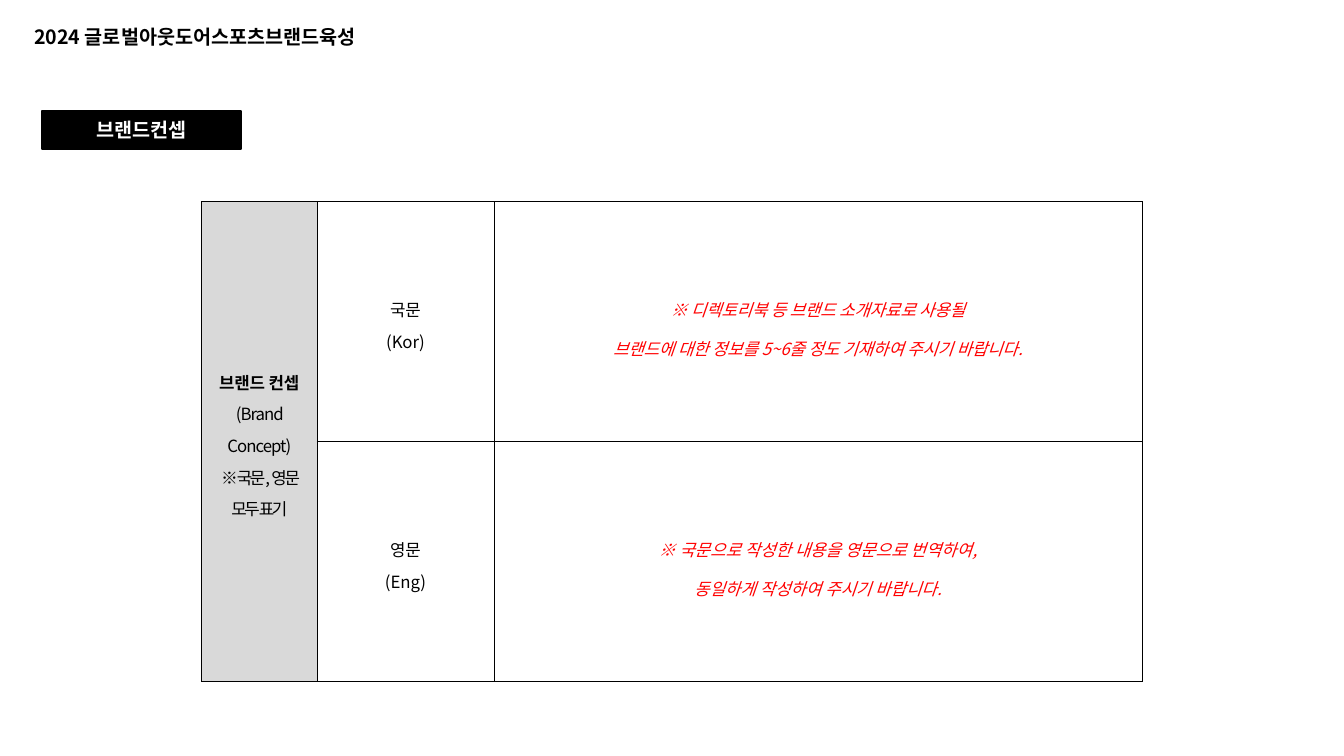
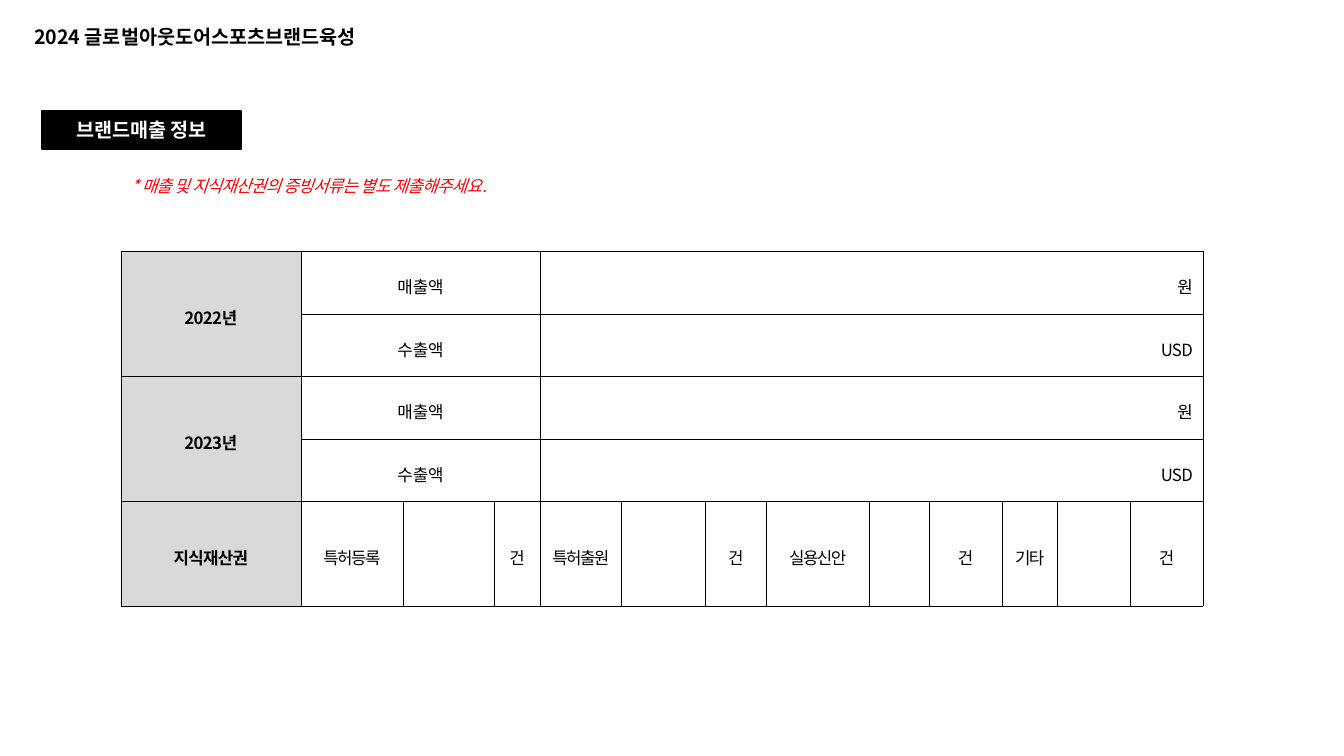
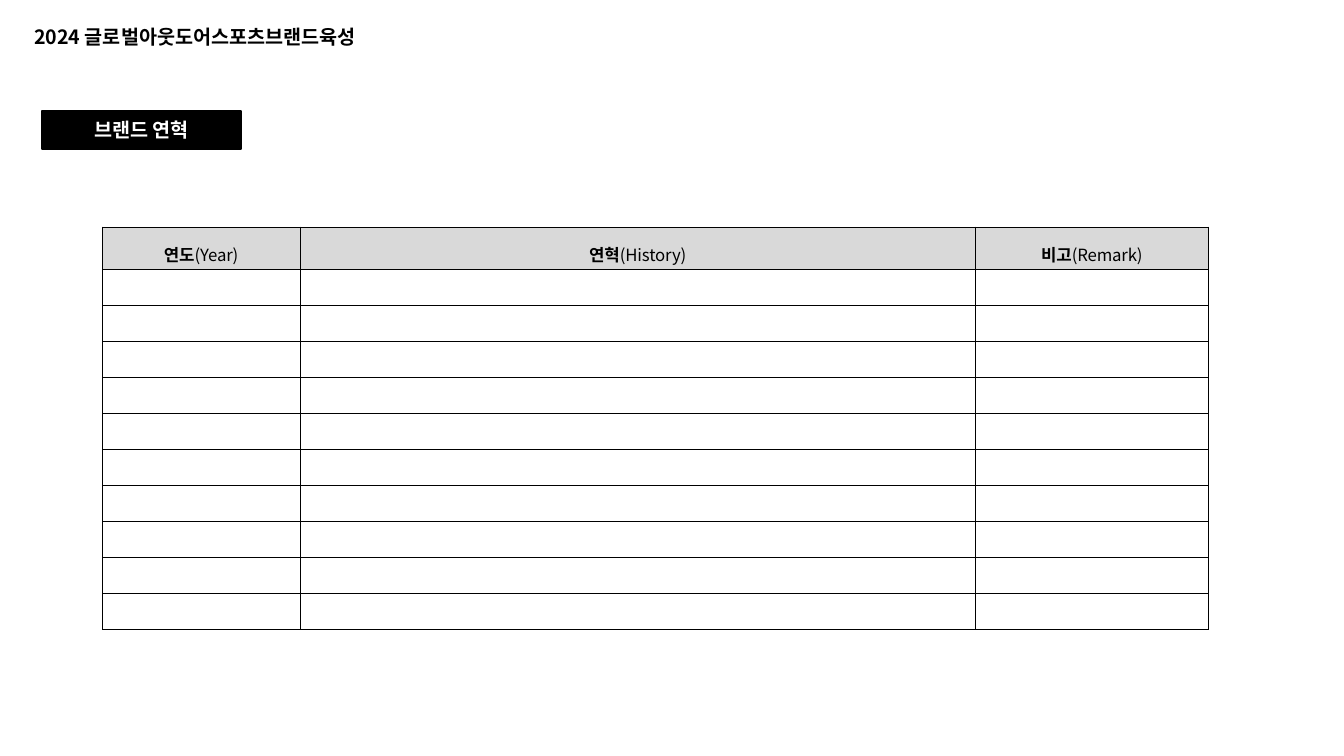
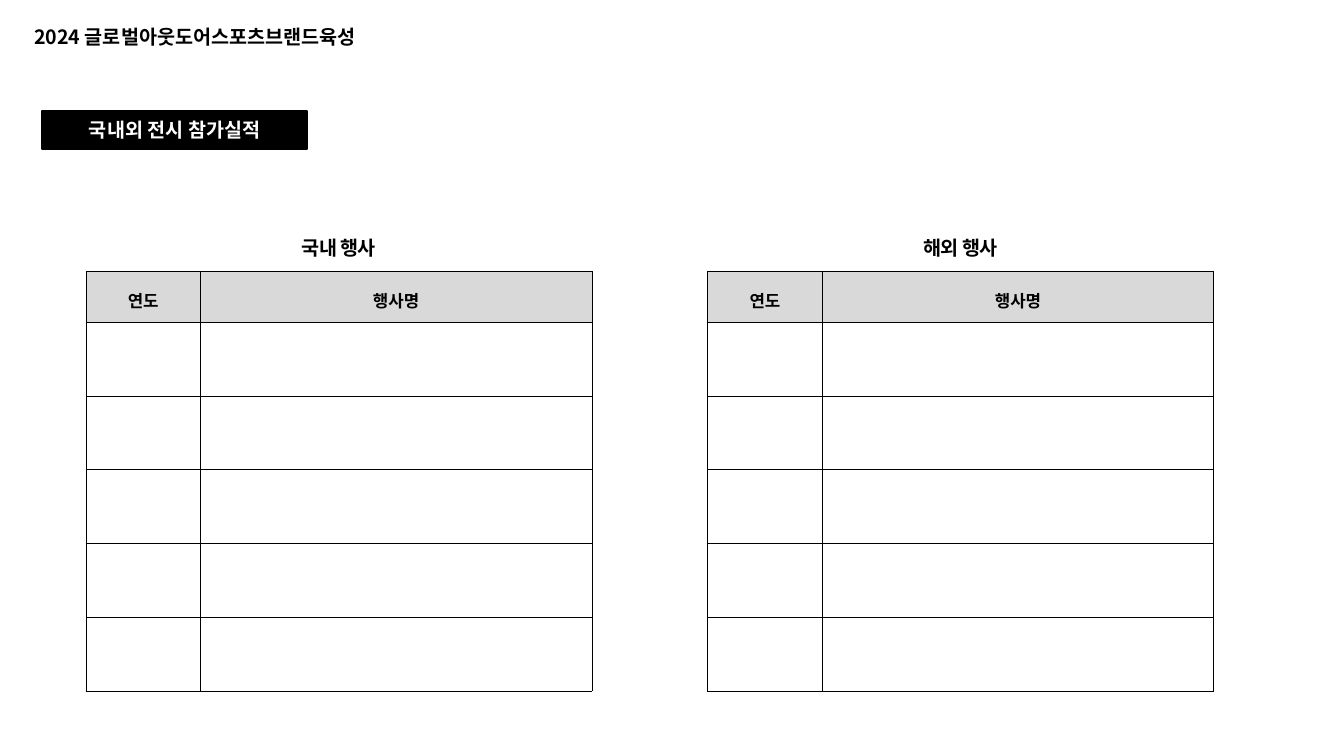
"""Build the four-slide brand application form."""
import lxml.etree
import pptx
import pptx.dml.color
import pptx.enum.shapes
import pptx.enum.text
import pptx.oxml.ns
import pptx.util

Pt = pptx.util.Pt
qn = pptx.oxml.ns.qn
ALIGN = pptx.enum.text.PP_ALIGN
MIDDLE = pptx.enum.text.MSO_ANCHOR.MIDDLE


def rgb(code):
    """Turn a hex string into a colour."""
    return pptx.dml.color.RGBColor.from_string(code)


class Form:
    """Hold the shared style and the current slide."""

    FONT = "Noto Sans CJK KR"
    INK = "000000"
    PAPER = "FFFFFF"
    SHADE = "D9D9D9"
    GUIDE = "FF0000"
    RULE = 0.28
    PROGRAM = "2024 글로벌아웃도어스포츠브랜드육성"

    def __init__(self):
        """Start an empty widescreen presentation."""
        self.deck = pptx.Presentation()
        self.deck.slide_width, self.deck.slide_height = Pt(960), Pt(540)
        self.slide = None

    def page(self, section, banner_width=142):
        """Add a slide with the program name and a section banner."""
        self.slide = self.deck.slides.add_slide(self.deck.slide_layouts[6])
        self.caption(17.3, 14.4, 333, self.PROGRAM, size=14, bold=True)
        banner = self.slide.shapes.add_shape(
            pptx.enum.shapes.MSO_SHAPE.RECTANGLE,
            Pt(30.2), Pt(79.2), Pt(banner_width), Pt(27.4))
        banner.shadow.inherit = False
        banner.fill.solid()
        banner.fill.fore_color.rgb = rgb(self.INK)
        banner.line.color.rgb = rgb(self.INK)
        banner.line.width = Pt(1.5)
        banner.text_frame.vertical_anchor = MIDDLE
        self.lay_text(banner.text_frame, [section], size=14, bold=True,
                      color=self.PAPER, align=ALIGN.CENTER)

    def caption(self, left, top, width, text, **style):
        """Add one line of free text."""
        box = self.slide.shapes.add_textbox(Pt(left), Pt(top), Pt(width), Pt(24.5))
        box.text_frame.word_wrap = True
        box.text_frame.auto_size = pptx.enum.text.MSO_AUTO_SIZE.SHAPE_TO_FIT_TEXT
        self.lay_text(box.text_frame, [text], **style)

    def lay_text(self, frame, lines, **style):
        """Set lines, each a string or a (string, style changes) pair."""
        for index, line in enumerate(lines):
            text, changes = (line, {}) if isinstance(line, str) else line
            paragraph = frame.paragraphs[0] if index == 0 else frame.add_paragraph()
            if text:
                paragraph.add_run().text = text
            self.style(paragraph, **{**style, **changes})

    def style(self, paragraph, size=12, color=INK, bold=False, italic=False,
              align=ALIGN.LEFT, leading=None, tracking=0):
        """Set the font and layout of one paragraph."""
        paragraph.alignment = align
        if leading:
            paragraph.line_spacing = leading
        font = paragraph.font
        font.name, font.size = self.FONT, Pt(size)
        font.bold, font.italic = bold, italic
        font.color.rgb = rgb(color)
        defaults = paragraph._p.pPr.find(qn("a:defRPr"))
        defaults.set("spc", str(round(tracking * 100)))
        if defaults.find(qn("a:ea")) is None:
            lxml.etree.SubElement(defaults, qn("a:ea"), typeface=self.FONT)

    def table(self, left, top, widths, heights):
        """Add a ruled, unfilled table."""
        grid = self.slide.shapes.add_table(
            len(heights), len(widths), Pt(left), Pt(top),
            Pt(sum(widths)), Pt(sum(heights))).table
        grid.first_row = grid.horz_banding = False
        for column, width in zip(grid.columns, widths):
            column.width = Pt(width)
        for row, height in zip(grid.rows, heights):
            row.height = Pt(height)
        for cell in grid.iter_cells():
            self.rule(cell)
            cell.fill.background()
            self.style(cell.text_frame.paragraphs[0])
        return grid

    def rule(self, cell):
        """Draw the four borders of a cell."""
        properties = cell._tc.get_or_add_tcPr()
        for side in ("a:lnL", "a:lnR", "a:lnT", "a:lnB"):
            border = lxml.etree.SubElement(properties, qn(side), w=str(int(Pt(self.RULE))))
            ink = lxml.etree.SubElement(border, qn("a:solidFill"))
            lxml.etree.SubElement(ink, qn("a:srgbClr"), val=self.INK)

    def entry(self, cell, *lines, inset=(7.2, 5.76), shaded=False, **style):
        """Fill one table cell with text."""
        cell.margin_left = cell.margin_right = Pt(inset[0])
        cell.margin_top = cell.margin_bottom = Pt(inset[1])
        cell.vertical_anchor = MIDDLE
        if shaded:
            cell.fill.solid()
            cell.fill.fore_color.rgb = rgb(self.SHADE)
        self.lay_text(cell.text_frame, lines,
                      **{"align": ALIGN.CENTER, "leading": 1.3, **style})


def concept(form):
    """Build the brand concept slide."""
    form.page("브랜드컨셉")
    grid = form.table(144, 144, [82.5, 126.3, 463], [171.4] * 2)
    inset = (5.76, 4.32)
    grid.cell(0, 0).merge(grid.cell(1, 0))
    form.entry(grid.cell(0, 0),
               ("브랜드 컨셉", {"bold": True, "tracking": -0.1}),
               ("(Brand Concept)", {"tracking": -0.7}),
               ("※ 국문, 영문 모두 표기", {"tracking": -1.7}),
               inset=inset, shaded=True)
    languages = [
        (("국문", "(Kor)"), -0.1,
         ("※ 디렉토리북 등 브랜드 소개자료로 사용될",
          "브랜드에 대한 정보를 5~6줄 정도 기재하여 주시기 바랍니다.")),
        (("영문", "(Eng)"), 0,
         ("※ 국문으로 작성한 내용을 영문으로 번역하여,",
          "동일하게 작성하여 주시기 바랍니다.")),
    ]
    for row, (language, tracking, guide) in enumerate(languages):
        form.entry(grid.cell(row, 1), *language, inset=inset)
        form.entry(grid.cell(row, 2), *guide, inset=inset, color=form.GUIDE,
                   italic=True, leading=1.6, tracking=tracking)


def sales(form):
    """Build the sales and intellectual property slide."""
    form.page("브랜드매출 정보")
    widths = [128.5, 73, 65, 33, 58, 60, 43.5, 73.5, 43, 52, 39.5, 52, 52]
    grid = form.table(86.4, 179.7, widths, [44.6] * 4 + [75])
    for top, year in ((0, "2022년"), (2, "2023년")):
        grid.cell(top, 0).merge(grid.cell(top + 1, 0))
        form.entry(grid.cell(top, 0), year, shaded=True, bold=True, tracking=-0.5)
        for row, (item, unit) in enumerate((("매출액", "원"), ("수출액", "USD")), top):
            grid.cell(row, 1).merge(grid.cell(row, 3))
            grid.cell(row, 4).merge(grid.cell(row, 12))
            form.entry(grid.cell(row, 1), item)
            form.entry(grid.cell(row, 4), unit, align=ALIGN.RIGHT, tracking=-0.5)
    form.entry(grid.cell(4, 0), "지식재산권", shaded=True, bold=True, tracking=-0.5)
    for index, right in enumerate(("특허등록", "특허출원", "실용신안", "기타")):
        column = 1 + 3 * index
        form.entry(grid.cell(4, column), right, tracking=-1.1)
        form.entry(grid.cell(4, column + 2), "건", tracking=-1.1)
    form.caption(86.4, 121.7, 590, "* 매출 및 지식재산권의 증빙서류는 별도 제출해주세요.",
                 color=form.GUIDE, italic=True, tracking=-0.5)


def history(form):
    """Build the brand history slide."""
    form.page("브랜드 연혁")
    grid = form.table(73, 162, [141.4, 482.3, 166.5], [30] + [25.7] * 10)
    headings = (("연도", "(Year)"), ("연혁", "(History)"), ("비고", "(Remark)"))
    for cell, (korean, english) in zip(grid.rows[0].cells, headings):
        form.entry(cell, korean, shaded=True, bold=True, tracking=-0.1)
        translation = cell.text_frame.paragraphs[0].add_run()
        translation.text = english
        translation.font.bold = False


def exhibitions(form):
    """Build the exhibition record slide."""
    form.page("국내외 전시 참가실적", 189.4)
    for left, region in ((61.2, "국내 행사"), (505.4, "해외 행사")):
        grid = form.table(left, 193.7, [82.1, 279.4], [36.4] + [52.7] * 5)
        form.entry(grid.cell(0, 0), "연도", shaded=True, bold=True, tracking=-0.1)
        form.entry(grid.cell(0, 1), "행사명", shaded=True, bold=True)
        form.caption(left, 164.9, 361.5, region, size=14, bold=True,
                     align=ALIGN.CENTER, tracking=-0.5)


def main():
    """Build and save every slide."""
    form = Form()
    for build in (concept, sales, history, exhibitions):
        build(form)
    form.deck.save("out.pptx")


if __name__ == "__main__":
    main()
